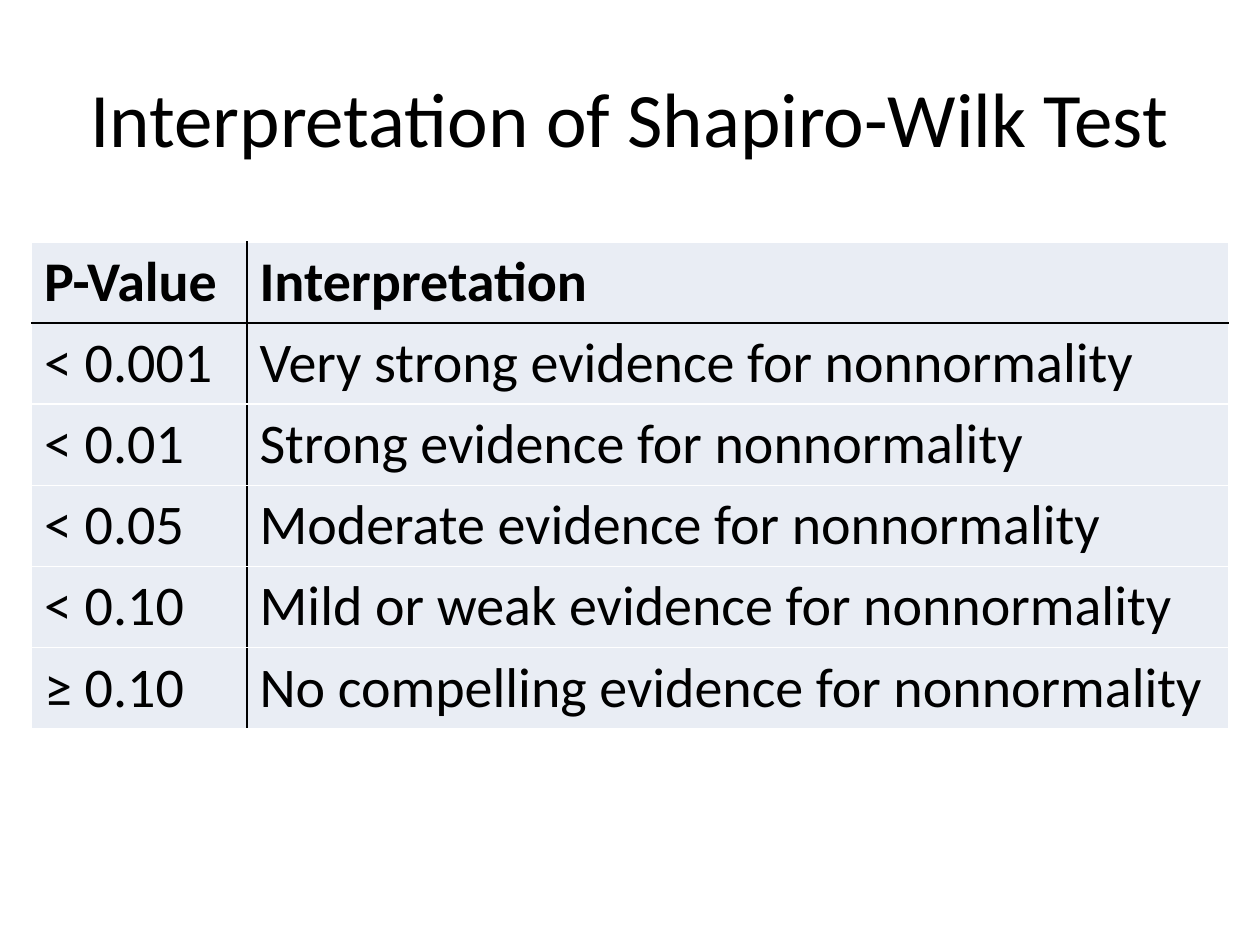
from dataclasses import dataclass

from lxml import etree
from pptx import Presentation
from pptx import util as u
from pptx.dml.color import RGBColor
from pptx.enum import text
from pptx.oxml.ns import qn

COLORS = {"text": "000000", "cell": "E9EDF4", "rule": "000000", "gap": "FFFFFF"}
TITLE_FONT = {"name": "Calibri", "size": u.Pt(44), "bold": False}
HEAD_FONT = {"name": "Calibri", "size": u.Pt(32), "bold": True}
BODY_FONT = HEAD_FONT | {"bold": False}
COL_WIDTHS = (1.71, 7.79)
ROW_HEIGHT = 0.64


@dataclass
class Row:
    p_value: str
    meaning: str


ROWS = [
    Row("P-Value", "Interpretation"),
    Row("< 0.001", "Very strong evidence for nonnormality"),
    Row("< 0.01", "Strong evidence for nonnormality"),
    Row("< 0.05", "Moderate evidence for nonnormality"),
    Row("< 0.10", "Mild or weak evidence for nonnormality"),
    Row("≥ 0.10", "No compelling evidence for nonnormality"),
]


def write(tf, value: str, font: dict) -> None:
    p = tf.paragraphs[0]
    r = p.add_run()
    r.text = value
    for key, setting in font.items():
        setattr(r.font, key, setting)
    r.font.color.rgb = RGBColor.from_string(COLORS["text"])


def add_border(cell, side: str, color: str) -> None:
    tc_pr = cell._tc.get_or_add_tcPr()
    ln = etree.SubElement(tc_pr, qn(f"a:ln{side}"), w=str(u.Pt(1)))
    fill = etree.SubElement(ln, qn("a:solidFill"))
    etree.SubElement(fill, qn("a:srgbClr"), val=COLORS[color])


def format_cell(cell, row: int, col: int) -> None:
    ruled = {"L": col == 1, "R": col == 0, "T": row == 1, "B": row == 0}
    for side, is_rule in ruled.items():
        add_border(cell, side, "rule" if is_rule else "gap")
    cell.fill.solid()
    cell.fill.fore_color.rgb = RGBColor.from_string(COLORS["cell"])


def add_title(s, value: str) -> None:
    sp = s.shapes.title
    sp.left, sp.top, sp.width, sp.height = map(u.Inches, (0.5, 0.3, 9, 1.25))
    tf = sp.text_frame
    tf.vertical_anchor = text.MSO_ANCHOR.MIDDLE
    tf.paragraphs[0].alignment = text.PP_ALIGN.CENTER
    write(tf, value, TITLE_FONT)


def add_result_table(s, rows: list[Row]) -> None:
    box = map(u.Inches, (0.25, 1.92, sum(COL_WIDTHS), ROW_HEIGHT * len(rows)))
    table = s.shapes.add_table(len(rows), len(COL_WIDTHS), *box).table
    table.horz_banding = False
    for column, width in zip(table.columns, COL_WIDTHS):
        column.width = u.Inches(width)
    for i, row in enumerate(rows):
        table.rows[i].height = u.Inches(ROW_HEIGHT)
        for j, value in enumerate((row.p_value, row.meaning)):
            cell = table.cell(i, j)
            format_cell(cell, i, j)
            write(cell.text_frame, value, BODY_FONT if i else HEAD_FONT)


def main() -> None:
    prs = Presentation()
    prs.slide_width, prs.slide_height = u.Inches(10), u.Inches(7.5)
    s = prs.slides.add_slide(prs.slide_layouts[5])
    add_title(s, "Interpretation of Shapiro-Wilk Test")
    add_result_table(s, ROWS)
    prs.save("out.pptx")


if __name__ == "__main__":
    main()
